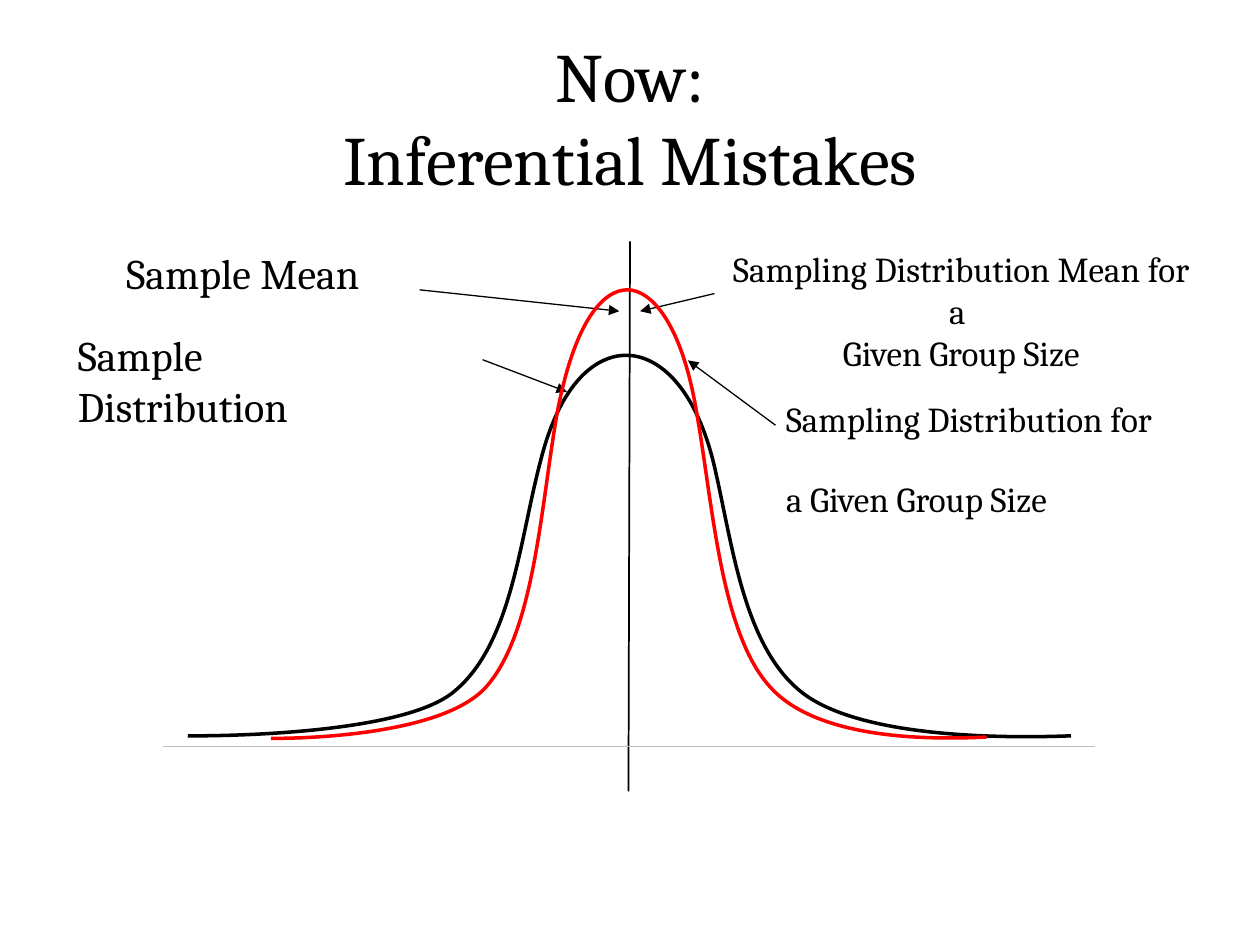
from dataclasses import dataclass

from lxml import etree
from pptx import Presentation
from pptx.dml.color import RGBColor
from pptx.enum.shapes import MSO_CONNECTOR
from pptx.enum.text import MSO_ANCHOR, MSO_AUTO_SIZE, PP_ALIGN
from pptx.oxml.ns import qn
from pptx.util import Inches, Pt

STRAIGHT = MSO_CONNECTOR.STRAIGHT
LEFT, CENTER = PP_ALIGN.LEFT, PP_ALIGN.CENTER
TOP, MIDDLE = MSO_ANCHOR.TOP, MSO_ANCHOR.MIDDLE
NO_FIT = MSO_AUTO_SIZE.NONE
TITLE_ONLY = 5
COLUMNS, ROWS = 100, 75


@dataclass(frozen=True)
class Theme:
    font: str = "Cambria"
    ink: str = "000000"
    accent: str = "FF0000"
    baseline: str = "BFBFBF"
    title_size: float = 39.6
    label_size: float = 24
    note_size: float = 20
    arrow_width: float = 0.75
    axis_width: float = 1
    curve_width: float = 2


def write_text(text_frame, text, *, font, size, color, align=LEFT, anchor=TOP):
    text_frame.word_wrap = True
    text_frame.auto_size = NO_FIT
    text_frame.vertical_anchor = anchor
    paragraph = text_frame.paragraphs[0]
    paragraph.text = text
    paragraph.alignment = align
    for run in paragraph.runs:
        run.font.name = font
        run.font.size = Pt(size)
        run.font.color.rgb = RGBColor.from_string(color)


def bend_segments(shape):
    outline = shape._element.find(".//" + qn("a:path"))
    corners = outline.findall(qn("a:lnTo"))
    for i in range(0, len(corners), 3):
        bezier = etree.SubElement(outline, qn("a:cubicBezTo"))
        for corner in corners[i:i + 3]:
            bezier.append(corner[0])
            outline.remove(corner)


class SlideBuilder:
    def __init__(self, presentation, theme):
        self.theme = theme
        self.column = presentation.slide_width / COLUMNS
        self.row = presentation.slide_height / ROWS
        self.slide = presentation.slides.add_slide(
            presentation.slide_layouts[TITLE_ONLY]
        )

    def place(self, x, y):
        return round(x * self.column), round(y * self.row)

    def style_line(self, line, color, width):
        line.color.rgb = RGBColor.from_string(color)
        line.width = Pt(width)

    def title(self, text, x, y, width, height):
        shape = self.slide.shapes.title
        shape.left, shape.top = self.place(x, y)
        shape.width, shape.height = self.place(width, height)
        write_text(shape.text_frame, text, font=self.theme.font,
                   size=self.theme.title_size, color=self.theme.ink,
                   align=CENTER, anchor=MIDDLE)

    def label(self, text, x, y, width, height, size, align=LEFT):
        shape = self.slide.shapes.add_textbox(
            *self.place(x, y), *self.place(width, height)
        )
        write_text(shape.text_frame, text, font=self.theme.font, size=size,
                   color=self.theme.ink, align=align)

    def line(self, start, end, color, width):
        connector = self.slide.shapes.add_connector(
            STRAIGHT, *self.place(*start), *self.place(*end)
        )
        self.style_line(connector.line, color, width)
        etree.SubElement(connector._element.spPr, qn("a:effectLst"))
        return connector

    def arrow(self, start, end):
        connector = self.line(start, end, self.theme.ink, self.theme.arrow_width)
        outline = connector.line._get_or_add_ln()
        etree.SubElement(outline, qn("a:tailEnd"), type="triangle")

    def curve(self, points, color):
        start, *corners = [self.place(*point) for point in points]
        builder = self.slide.shapes.build_freeform(*start, scale=1.0)
        builder.add_line_segments(corners, close=False)
        shape = builder.convert_to_shape()
        bend_segments(shape)
        shape.shadow.inherit = False
        shape.fill.background()
        self.style_line(shape.line, color, self.theme.curve_width)


SAMPLE_CURVE = [
    (85, 58.4),
    (79.8, 58.6), (68.4, 58.6), (63.7, 55),
    (58.9, 51.3), (58.1, 42.8), (56.6, 36.6),
    (55, 30.3), (52, 28.2), (49.7, 28.2),
    (47.4, 28.2), (44.5, 30.2), (42.9, 36.6),
    (41.2, 43), (40.6, 51.3), (35.9, 55),
    (31.3, 58.6), (14.9, 58.4), (14.9, 58.4),
]
SAMPLING_CURVE = [
    (78.3, 58.5),
    (74.1, 58.7), (64.9, 58.8), (61.1, 54.5),
    (57.2, 50.2), (56.6, 40.2), (55.3, 32.8),
    (54.1, 25.5), (51.6, 23), (49.8, 23),
    (47.9, 23), (45.6, 25.4), (44.2, 32.9),
    (42.9, 40.4), (42.4, 50.2), (38.6, 54.5),
    (34.8, 58.8), (21.5, 58.6), (21.5, 58.6),
]


def main():
    presentation = Presentation()
    presentation.slide_width, presentation.slide_height = Inches(10), Inches(7.5)
    theme = Theme()
    builder = SlideBuilder(presentation, theme)

    builder.title("Now:\vInferential Mistakes", 5, 3, 90, 12.5)
    builder.line((50, 19.15), (49.88, 62.8), theme.ink, theme.axis_width)
    builder.line((12.9, 59.25), (86.9, 59.25), theme.baseline, theme.axis_width)

    builder.label("Sample Mean", 9.05, 19.15, 20.6, 5, theme.label_size)
    builder.arrow((33.3, 23), (49.15, 24.7))
    builder.label("Sample Distribution", 5.2, 25.7, 29.2, 5, theme.label_size)
    builder.arrow((38.3, 28.55), (45, 31.1))
    builder.curve(SAMPLE_CURVE, theme.ink)

    builder.label("Sampling Distribution Mean for a \vGiven Group Size",
                  56.3, 19.15, 40, 7.7, theme.note_size, CENTER)
    builder.arrow((56.7, 23.3), (50.8, 24.7))
    builder.label("Sampling Distribution for \va Given Group Size",
                  61.4, 31.05, 31.1, 7.7, theme.note_size)
    builder.arrow((61.55, 33.75), (54.6, 28.6))
    builder.curve(SAMPLING_CURVE, theme.accent)

    presentation.save("out.pptx")


if __name__ == "__main__":
    main()
